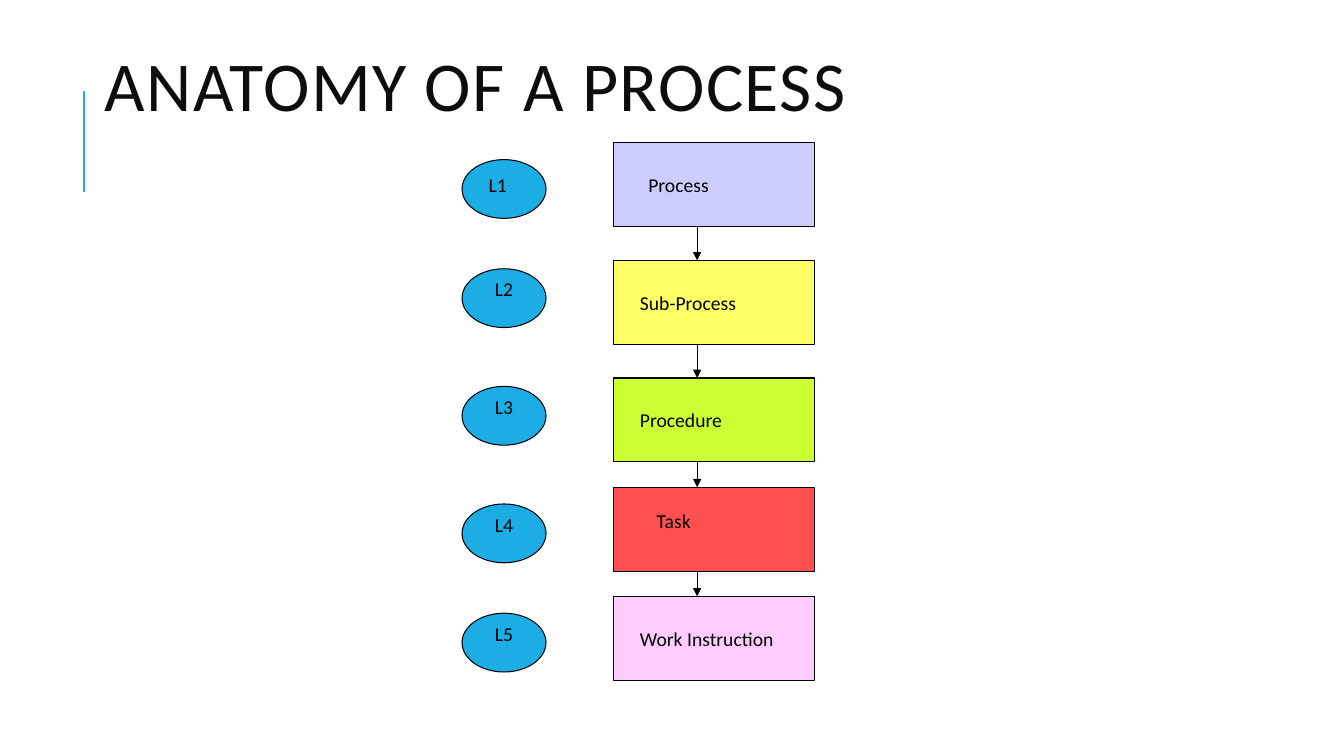
import pptx
import pptx.util
import pptx.dml.color
import pptx.enum.shapes
import pptx.enum.text
import pptx.oxml
import pptx.oxml.ns

Pt = pptx.util.Pt
RGB = pptx.dml.color.RGBColor.from_string
Kind = pptx.enum.shapes.MSO_SHAPE
Align = pptx.enum.text.PP_ALIGN
Anchor = pptx.enum.text.MSO_ANCHOR

theme = {
    "font": "Calibri",
    "head": 50,
    "body": 14,
    "ink": RGB("000000"),
    "title": RGB("0D0D0D"),
    "blue": RGB("1CADE4"),
    "thin": Pt(0.75),
    "rule": Pt(1.5),
}

deck = pptx.Presentation()
deck.slide_width, deck.slide_height = Pt(960), Pt(540)
slide = deck.slides.add_slide(deck.slide_layouts[5])
shapes = slide.shapes


def write(shape, text, size, color, align):
    frame = shape.text_frame
    frame.text = text
    para = frame.paragraphs[0]
    para.alignment = align
    font = para.runs[0].font
    font.name, font.size = theme["font"], Pt(size)
    font.color.rgb = color
    return para


def draw(x, top, end, color, width):
    line = shapes.add_connector(
        pptx.enum.shapes.MSO_CONNECTOR.STRAIGHT, Pt(x), Pt(top), Pt(x), Pt(end))
    line.line.color.rgb = color
    line.line.width = width
    props = line._element.spPr
    props.append(pptx.oxml.parse_xml(
        "<a:effectLst %s/>" % pptx.oxml.ns.nsdecls("a")))
    return line


title = shapes.title
title.left, title.top, title.width, title.height = Pt(67.7), Pt(6), Pt(765), Pt(118)
para = write(title, "ANATOMY OF A PROCESS", theme["head"], theme["title"], Align.LEFT)
para.line_spacing = 0.8
para.runs[0].font._element.set("spc", "100")
title.text_frame.auto_size = pptx.enum.text.MSO_AUTO_SIZE.NONE
title.text_frame.vertical_anchor = Anchor.MIDDLE

draw(60, 137, 65, theme["blue"], theme["rule"])

left, wide, high = 438, 144, 60
steps = [
    ("Process", "CCCCFF", 102, 114, 456, 120),
    ("Sub-Process", "FFFF66", 186, 192, 450, 204),
    ("Procedure", "CCFF33", 270, 276, 450, 288),
    ("Task", "FF5050", 348, 360, 462, 360),
    ("Work Instruction", "FFCCFF", 426, 438, 450, 444),
]

for rank, (name, fill, top, oval_top, text_x, text_y) in enumerate(steps, 1):
    box = shapes.add_shape(Kind.RECTANGLE, Pt(left), Pt(top), Pt(wide), Pt(high))
    oval = shapes.add_shape(Kind.OVAL, Pt(330), Pt(oval_top), Pt(60), Pt(42))
    for shape, color in ((box, RGB(fill)), (oval, theme["blue"])):
        shape.shadow.inherit = False
        shape.fill.solid()
        shape.fill.fore_color.rgb = color
        shape.line.color.rgb = theme["ink"]
        shape.line.width = theme["thin"]

    notes = [(name, text_x, text_y, 126)]
    if rank == 1:
        notes.append(("L1", 342, 120, 48))
    else:
        write(oval, f"L{rank}", theme["body"], theme["ink"], Align.CENTER)
        oval.text_frame.word_wrap = False
        oval.text_frame.vertical_anchor = Anchor.TOP
        oval.text_frame.margin_top = 0
    for text, x, y, width in notes:
        note = shapes.add_textbox(Pt(x), Pt(y), Pt(width), Pt(24))
        note.text_frame.word_wrap = True
        write(note, text, theme["body"], theme["ink"], Align.LEFT)

for step, after in zip(steps, steps[1:]):
    arrow = draw(498, step[2] + high, after[2], theme["ink"], theme["thin"])
    arrow.line._get_or_add_ln().append(pptx.oxml.parse_xml(
        '<a:tailEnd %s type="triangle"/>' % pptx.oxml.ns.nsdecls("a")))

deck.save("out.pptx")
